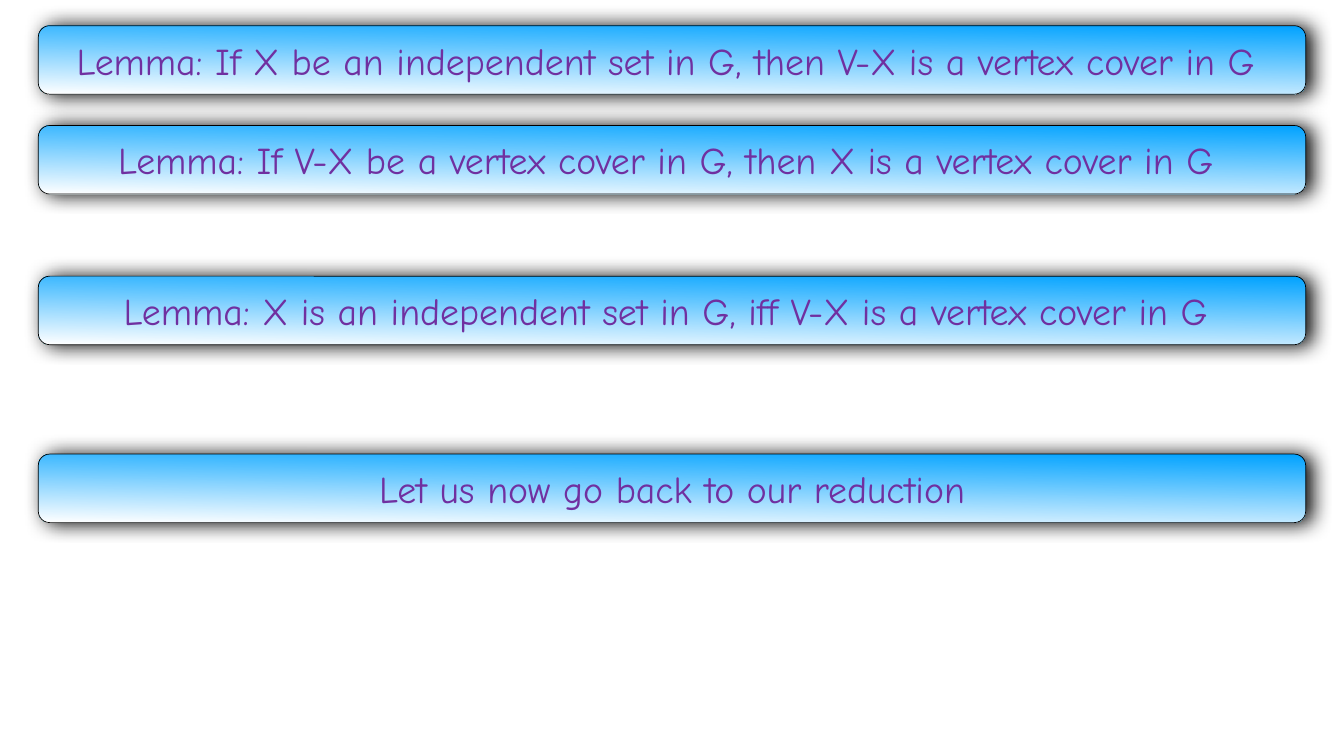
"""Build the slide of lemmas on independent sets and vertex covers."""
from lxml.etree import SubElement
from pptx import Presentation
from pptx.dml.color import RGBColor as Rgb
from pptx.enum.shapes import MSO_SHAPE as Shape
from pptx.enum.text import MSO_ANCHOR as Anchor, PP_ALIGN as Align
from pptx.oxml.ns import qn
from pptx.util import Inches, Pt

COLORS = {"blue": "00A2FF", "white": "FFFFFF", "purple": "7030A0", "black": "000000"}
WIDTH, HEIGHT = 26.67, 15
MARGIN, BANNER_HEIGHT, INSET = 0.76, 1.36, 0.06
BANNERS = [
    (0.51, "Lemma: If X be an independent set in G, then V-X is a vertex cover in G "),
    (2.49, "Lemma: If V-X be a vertex cover in G, then X is a vertex cover in G "),
    (5.48, "Lemma: X is an independent set in G, iff V-X is a vertex cover in G "),
    (9.01, "Let us now go back to our reduction"),
]


def add_banner(page, text, top, size=54, font="Comic Neue", color="purple"):
    box = page.shapes.add_shape(
        Shape.ROUNDED_RECTANGLE, Inches(MARGIN), Inches(top),
        Inches(WIDTH - 2 * MARGIN), Inches(BANNER_HEIGHT))
    box.fill.gradient()
    box.fill.gradient_angle = 360 - 91
    for stop, name in zip(box.fill.gradient_stops, ("blue", "white")):
        stop.color.rgb = Rgb.from_string(COLORS[name])
    box.line.color.rgb = Rgb.from_string(COLORS["black"])
    box.line.width = Pt(1)

    box.shadow.inherit = False
    effects = box.element.spPr.find(qn("a:effectLst"))
    shadow = SubElement(effects, qn("a:outerShdw"), blurRad=str(Pt(28)),
                        dist=str(Pt(9)), dir="0", rotWithShape="0")
    tint = SubElement(shadow, qn("a:srgbClr"), val=COLORS["black"])
    SubElement(tint, qn("a:alpha"), val="97000")

    frame = box.text_frame
    frame.word_wrap = True
    frame.vertical_anchor = Anchor.MIDDLE
    frame.margin_left = frame.margin_right = Inches(INSET)
    frame.margin_top = frame.margin_bottom = Inches(INSET)
    para = frame.paragraphs[0]
    para.alignment = Align.CENTER
    span = para.add_run()
    span.text = text
    span.font.name = font
    span.font.size = Pt(size)
    span.font.color.rgb = Rgb.from_string(COLORS[color])


deck = Presentation()
deck.slide_width, deck.slide_height = Inches(WIDTH), Inches(HEIGHT)
page = deck.slides.add_slide(deck.slide_layouts[6])
for top, text in BANNERS:
    add_banner(page, text, top)
deck.save("out.pptx")
